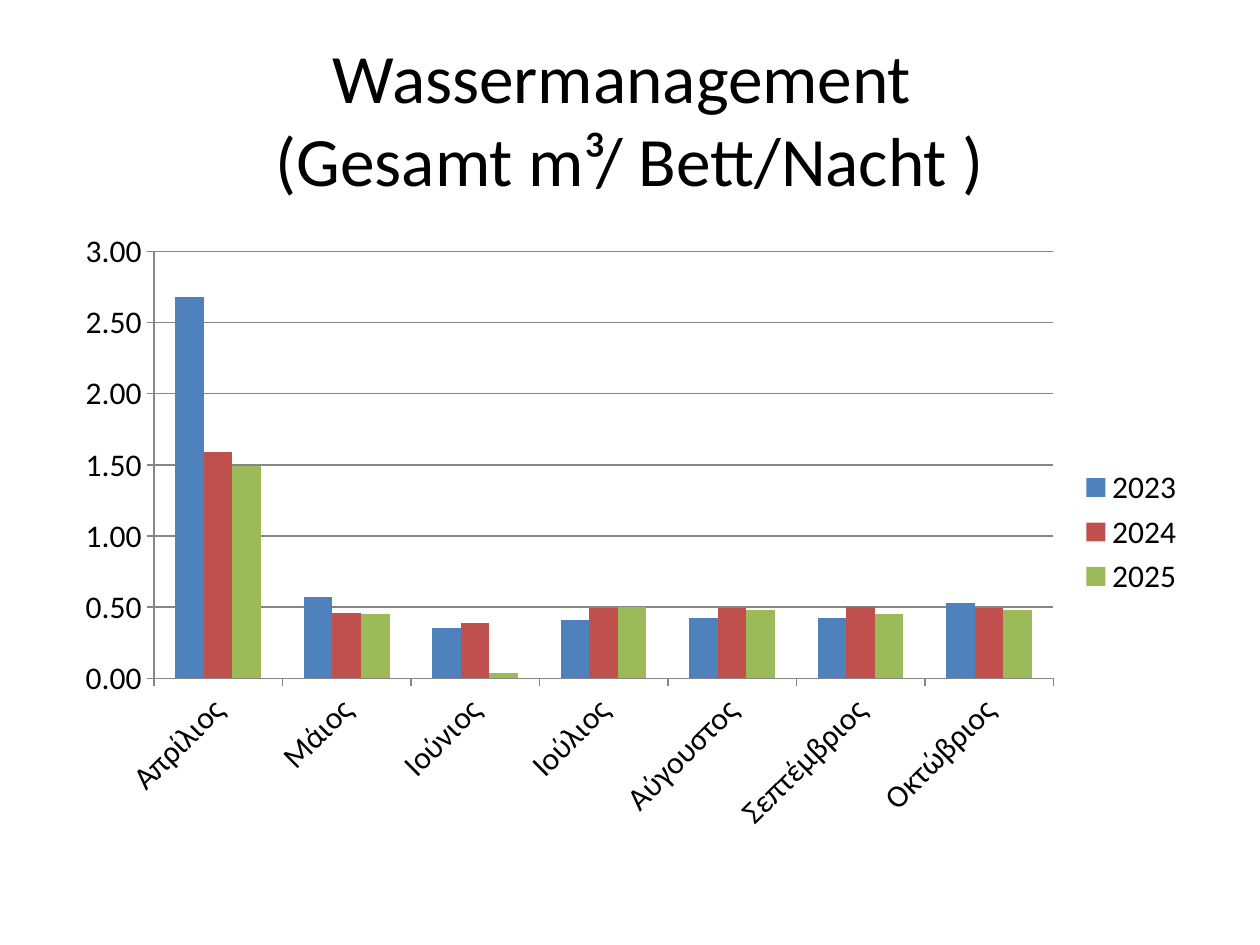
from pptx import Presentation
from pptx.chart.data import CategoryChartData
from pptx.dml.color import RGBColor
from pptx.enum.chart import XL_CHART_TYPE, XL_LEGEND_POSITION, XL_TICK_MARK
from pptx.enum.text import MSO_ANCHOR, MSO_AUTO_SIZE, PP_ALIGN
from pptx.util import Emu, Pt

# Content
TITLE = "Wassermanagement \v(Gesamt m³/ Bett/Nacht )"
MONTHS = ["Απρίλιος", "Μάιος", "Ιούνιος", "Ιούλιος", "Αύγουστος", "Σεπτέμβριος", "Οκτώβριος"]
WATER_USE = {
    "2023": [2.68, 0.57, 0.35, 0.41, 0.42, 0.42, 0.53],
    "2024": [1.59, 0.46, 0.39, 0.49, 0.49, 0.5, 0.49],
    "2025": [1.49, 0.45, 0.04, 0.5, 0.48, 0.45, 0.48],
}
COLORS = {"text": "000000", "axis": "868686",
          "2023": "4F81BD", "2024": "C0504D", "2025": "9BBB59"}
FONT_NAME = "Calibri"

# Layout in px
SLIDE_SIZE = (1260, 945)
TITLE_BOX = (63, 38, 1134, 158)
CHART_BOX = (63, 220, 1134, 624)


def px(value):
    return Emu(round(value * 914400 / 126))


def color(name):
    return RGBColor.from_string(COLORS[name])


def set_values(target, values):
    for name, value in values.items():
        setattr(target, name, value)


def format_font(font, size):
    set_values(font, {"name": FONT_NAME, "size": Pt(size)})
    font.color.rgb = color("text")


def format_line(line):
    line.color.rgb = color("axis")
    line.width = Pt(0.75)


presentation = Presentation()
presentation.slide_width, presentation.slide_height = map(px, SLIDE_SIZE)
slide = presentation.slides.add_slide(presentation.slide_layouts[5])

# Title
title = slide.shapes.title
set_values(title, dict(zip(("left", "top", "width", "height"), map(px, TITLE_BOX))))
title.text_frame.text = TITLE
set_values(title.text_frame, {"word_wrap": True, "auto_size": MSO_AUTO_SIZE.NONE,
                              "vertical_anchor": MSO_ANCHOR.MIDDLE})
paragraph = title.text_frame.paragraphs[0]
paragraph.alignment = PP_ALIGN.CENTER
for run in paragraph.runs:
    format_font(run.font, 39.6)

# Chart
chart_data = CategoryChartData(number_format="#,##0.00")
chart_data.categories = MONTHS
for year, values in WATER_USE.items():
    chart_data.add_series(year, values)
chart = slide.shapes.add_chart(
    XL_CHART_TYPE.COLUMN_CLUSTERED, *map(px, CHART_BOX), chart_data).chart
chart.has_title = False
format_font(chart.font, 18)

# Columns
plot = chart.plots[0]
set_values(plot, {"gap_width": 150, "overlap": 0, "vary_by_categories": False})
for series in plot.series:
    series.format.fill.solid()
    series.format.fill.fore_color.rgb = color(series.name)

# Axes
for axis in (chart.category_axis, chart.value_axis):
    set_values(axis, {"major_tick_mark": XL_TICK_MARK.OUTSIDE,
                      "minor_tick_mark": XL_TICK_MARK.NONE})
    format_line(axis.format.line)
set_values(chart.value_axis, {"minimum_scale": 0, "maximum_scale": 3, "major_unit": 0.5,
                              "has_major_gridlines": True})
format_line(chart.value_axis.major_gridlines.format.line)
set_values(chart.value_axis.tick_labels, {"number_format": "#,##0.00",
                                          "number_format_is_linked": False})

# Legend
chart.has_legend = True
set_values(chart.legend, {"position": XL_LEGEND_POSITION.RIGHT, "include_in_layout": False})

presentation.save("out.pptx")
